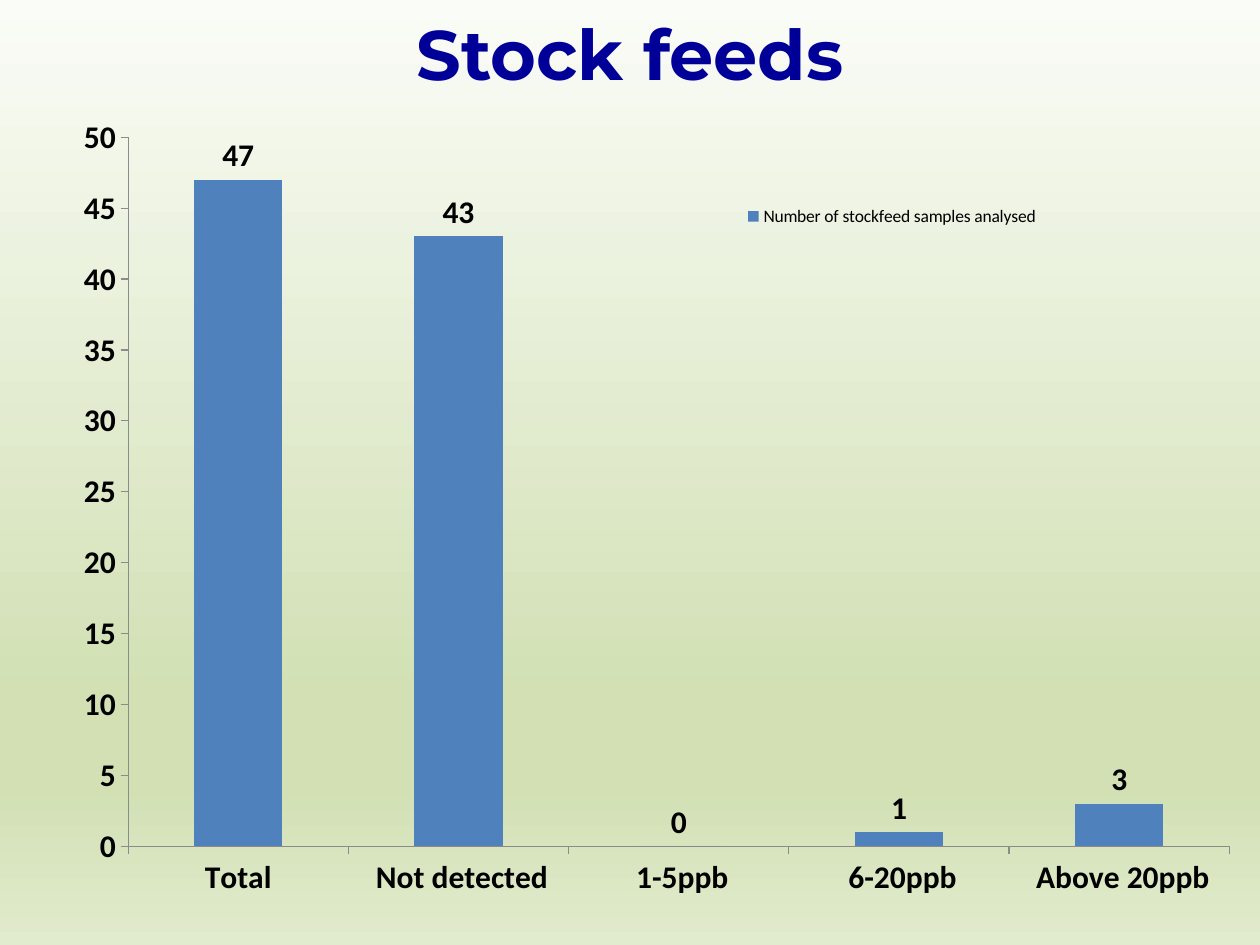
from pptx import Presentation
from pptx.chart.data import CategoryChartData
from pptx.dml.color import RGBColor
from pptx.enum.chart import XL_CHART_TYPE as ChartType
from pptx.enum.chart import XL_LABEL_POSITION as LabelPosition
from pptx.enum.chart import XL_LEGEND_POSITION as LegendPosition
from pptx.enum.chart import XL_TICK_MARK as TickMark
from pptx.enum.text import MSO_ANCHOR, PP_ALIGN
from pptx.oxml import parse_xml
from pptx.oxml.ns import nsdecls
from pptx.util import Pt

NAVY = RGBColor(0x00, 0x00, 0x99)
BLACK = RGBColor(0x00, 0x00, 0x00)
BLUE = RGBColor(0x4F, 0x81, 0xBD)
GRAY = RGBColor(0x8B, 0x8B, 0x8B)
CREAM = RGBColor(0xFA, 0xFC, 0xF7)
SAGE = RGBColor(0xD2, 0xE0, 0xB4)
PALE_SAGE = RGBColor(0xE1, 0xEB, 0xCD)


class SlideBuilder:
    title_font = "Montserrat"
    chart_font = "Calibri"

    def __init__(self, page):
        self.page = page

    def background(self, stops):
        """Fill the page from top to bottom with (percent, colour) stops."""
        fill = self.page.background.fill
        fill.gradient()
        fill.gradient_angle = 270
        stop_list = self.page.element.xpath(".//p:bg//a:gsLst")[0]
        for stop in list(stop_list):
            stop_list.remove(stop)
        for percent, color in stops:
            stop_list.append(parse_xml(
                f'<a:gs {nsdecls("a")} pos="{percent * 1000}">'
                f'<a:srgbClr val="{color}"/></a:gs>'))

    def title(self, text, left, top, width, height):
        box = self.page.shapes.add_textbox(Pt(left), Pt(top), Pt(width), Pt(height))
        frame = box.text_frame
        frame.word_wrap = True
        frame.vertical_anchor = MSO_ANCHOR.MIDDLE
        para = frame.paragraphs[0]
        para.text = text
        para.alignment = PP_ALIGN.CENTER
        para.line_spacing = 0.9
        self.style_font(para.font, 40, NAVY, self.title_font)

    def style_font(self, font, size, color, name, bold=True):
        font.size = Pt(size)
        font.bold = bold
        font.name = name
        font.color.rgb = color

    def column_chart(self, name, values, left, top, width, height):
        data = CategoryChartData()
        data.categories = list(values)
        data.add_series(name, list(values.values()))
        chart = self.page.shapes.add_chart(
            ChartType.COLUMN_CLUSTERED,
            Pt(left), Pt(top), Pt(width), Pt(height), data).chart
        chart.has_title = False
        self.style_font(chart.font, 10, BLACK, self.chart_font, bold=False)

        # Columns and their values
        plot = chart.plots[0]
        plot.vary_by_categories = False
        plot.gap_width = 150
        series = plot.series[0]
        series.format.fill.solid()
        series.format.fill.fore_color.rgb = BLUE
        labels = series.data_labels
        labels.show_value = True
        labels.position = LabelPosition.OUTSIDE_END
        self.style_font(labels.font, 18, BLACK, self.chart_font)

        # Axes
        for axis in (chart.category_axis, chart.value_axis):
            axis.has_major_gridlines = False
            axis.major_tick_mark = TickMark.OUTSIDE
            axis.minor_tick_mark = TickMark.NONE
            axis.format.line.color.rgb = GRAY
            axis.format.line.width = Pt(0.75)
            self.style_font(axis.tick_labels.font, 18, BLACK, self.chart_font)
        chart.value_axis.minimum_scale = 0
        chart.value_axis.maximum_scale = 50
        chart.value_axis.major_unit = 5

        # Legend
        chart.has_legend = True
        chart.legend.position = LegendPosition.RIGHT
        chart.legend.include_in_layout = False
        return chart

    def place(self, chart, part, index, target="", **fractions):
        """Give a chart part a fixed place, in fractions of the chart."""
        parent = chart.element.xpath(f".//c:{part}")[0]
        for layout in parent.xpath("./c:layout"):
            parent.remove(layout)
        modes = "".join(f'<c:{axis}Mode val="edge"/>' for axis in "xy")
        sizes = "".join(f'<c:{key} val="{value}"/>' for key, value in fractions.items())
        parent.insert(index, parse_xml(
            f'<c:layout {nsdecls("c")}><c:manualLayout>{target}{modes}{sizes}'
            '</c:manualLayout></c:layout>'))


def main():
    deck = Presentation()
    deck.slide_width, deck.slide_height = Pt(720), Pt(540)
    builder = SlideBuilder(deck.slides.add_slide(deck.slide_layouts[6]))

    # Background and title
    builder.background([(0, CREAM), (74, SAGE), (83, SAGE), (100, PALE_SAGE)])
    builder.title("Stock feeds", 138, 0, 444, 66)

    # Sample results
    samples = {"Total": 47, " Not detected": 43, " 1-5ppb": 0,
               " 6-20ppb": 1, " Above 20ppb": 3}
    chart = builder.column_chart("Number of stockfeed samples analysed", samples,
                                 24, 66, 684, 462)
    builder.place(chart, "plotArea", 0, '<c:layoutTarget val="inner"/>',
                  x=0.072, y=0.027, w=0.92, h=0.877)
    builder.place(chart, "legend", 1, x=0.58, y=0.1, w=0.26, h=0.05)

    deck.save("out.pptx")


if __name__ == "__main__":
    main()
